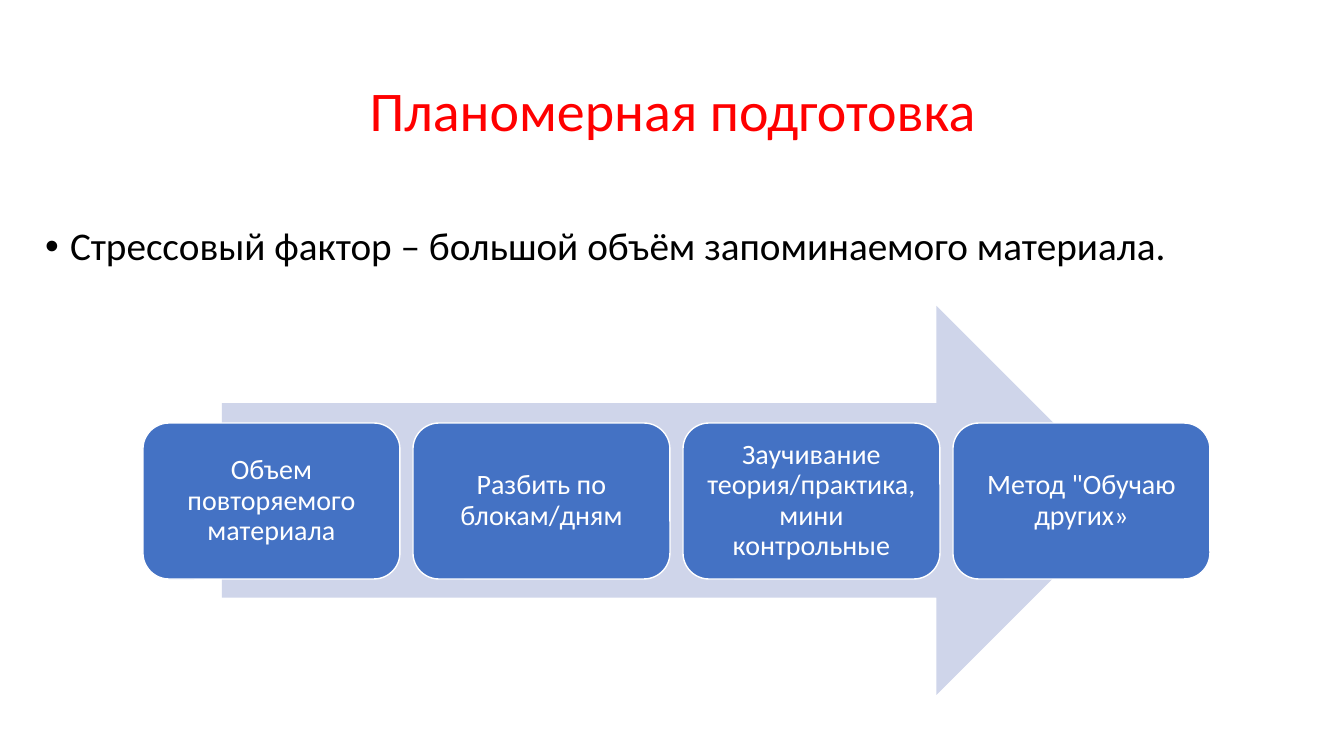
from dataclasses import dataclass

from lxml.etree import SubElement
from pptx import Presentation
from pptx.dml.color import RGBColor
from pptx.enum.shapes import MSO_SHAPE
from pptx.enum.text import MSO_ANCHOR, PP_ALIGN
from pptx.oxml.ns import qn
from pptx.util import Emu, Pt


@dataclass(frozen=True)
class Theme:
    font: str = "Calibri"
    title_color: str = "FF0000"
    body_color: str = "000000"
    arrow_color: str = "CFD5EA"
    step_color: str = "4472C4"
    light_color: str = "FFFFFF"
    title_size: int = 40
    body_size: int = 28
    step_size: int = 20
    line_spacing: float = 0.9
    outline_width: int = 1


EMU_PER_PX = 914400 / 100.8
SLIDE_SIZE = (1344, 756)
STEPS = [
    "Объем повторяемого материала",
    "Разбить по блокам/дням",
    "Заучивание теория/практика, мини контрольные",
    'Метод "Обучаю других»',
]
STEP_LEFT, STEP_TOP, STEP_WIDTH, STEP_HEIGHT = 143, 423, 257, 156
STEP_PITCH = 270
STEP_MARGIN = 8
BULLET_INDENT = 25


def px(length):
    return Emu(round(length * EMU_PER_PX))


def write_text(frame, text, *, theme, size, color, align=PP_ALIGN.CENTER,
               anchor=MSO_ANCHOR.MIDDLE, margins=(10, 5), space_before=0):
    frame.word_wrap = True
    frame.vertical_anchor = anchor
    frame.margin_left = frame.margin_right = px(margins[0])
    frame.margin_top = frame.margin_bottom = px(margins[1])
    paragraph = frame.paragraphs[0]
    paragraph.alignment = align
    paragraph.line_spacing = theme.line_spacing
    paragraph.space_before = Pt(space_before)
    run = paragraph.add_run()
    run.text = text
    run.font.name = theme.font
    run.font.size = Pt(size)
    run.font.color.rgb = RGBColor.from_string(color)
    return paragraph


class SlideBuilder:
    def __init__(self, slide, theme):
        self.slide = slide
        self.theme = theme

    def text(self, box, text, **text_format):
        shape = self.slide.shapes.add_textbox(*map(px, box))
        return write_text(shape.text_frame, text, theme=self.theme, **text_format)

    def bullet(self, box, text, **text_format):
        paragraph = self.text(box, text, align=PP_ALIGN.LEFT,
                              anchor=MSO_ANCHOR.TOP, **text_format)
        properties = paragraph._p.get_or_add_pPr()
        properties.set("marL", str(px(BULLET_INDENT)))
        properties.set("indent", str(-px(BULLET_INDENT)))
        SubElement(properties, qn("a:buFont")).set("typeface", "Arial")
        SubElement(properties, qn("a:buChar")).set("char", "•")

    def shape(self, kind, box, fill, outline=None):
        shape = self.slide.shapes.add_shape(kind, *map(px, box))
        shape.shadow.inherit = False
        shape.fill.solid()
        shape.fill.fore_color.rgb = RGBColor.from_string(fill)
        if outline:
            shape.line.color.rgb = RGBColor.from_string(outline)
            shape.line.width = Pt(self.theme.outline_width)
        else:
            shape.line.fill.background()
        return shape

    def step(self, box, text):
        theme = self.theme
        shape = self.shape(MSO_SHAPE.ROUNDED_RECTANGLE, box,
                           theme.step_color, theme.light_color)
        write_text(shape.text_frame, text, theme=theme, size=theme.step_size,
                   color=theme.light_color, margins=(STEP_MARGIN, STEP_MARGIN))


def main():
    theme = Theme()
    presentation = Presentation()
    presentation.slide_width, presentation.slide_height = map(px, SLIDE_SIZE)
    slide = presentation.slides.add_slide(presentation.slide_layouts[6])
    builder = SlideBuilder(slide, theme)

    builder.text((93, 40, 1159, 146), "Планомерная подготовка",
                 size=theme.title_size, color=theme.title_color)
    builder.bullet((35, 222, 1266, 459),
                   "Стрессовый фактор – большой объём запоминаемого материала.",
                   size=theme.body_size, color=theme.body_color, space_before=10)
    builder.shape(MSO_SHAPE.RIGHT_ARROW, (222, 306, 909, 389), theme.arrow_color)
    for index, step in enumerate(STEPS):
        left = STEP_LEFT + index * STEP_PITCH
        builder.step((left, STEP_TOP, STEP_WIDTH, STEP_HEIGHT), step)

    presentation.save("out.pptx")


if __name__ == "__main__":
    main()
